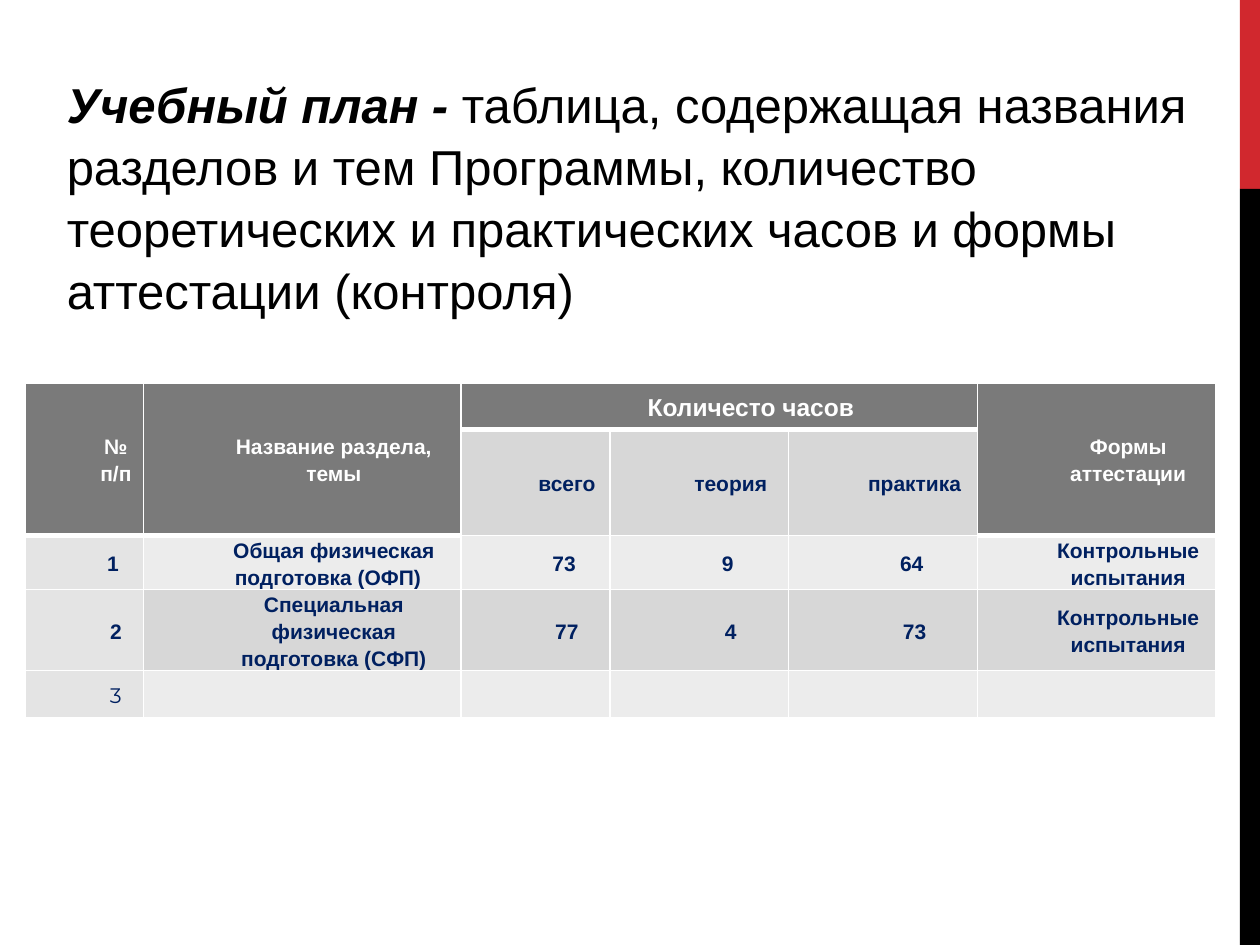
from lxml.etree import SubElement
from pptx import Presentation
from pptx.dml.color import RGBColor
from pptx.enum.shapes import MSO_SHAPE
from pptx.enum.text import MSO_ANCHOR, MSO_AUTO_SIZE, PP_ALIGN
from pptx.oxml import parse_xml
from pptx.oxml.ns import nsdecls, qn
from pptx.util import Inches, Pt

COL_WIDTHS = [0.94, 2.52, 1.18, 1.42, 1.5, 1.89]
ROW_HEIGHTS = [0.37, 0.84, 0.37, 0.37, 0.37]
HOURS_COLS = range(2, 5)
ROWS = [
    ["№ п/п", "Название раздела, темы", "Количесто часов", "", "", "Формы аттестации"],
    ["", "", "всего", "теория", "практика", ""],
    ["1 ", "Общая физическая подготовка (ОФП)  ", "73 ", "9 ", "64 ", "Контрольные испытания"],
    ["2", "Специальная физическая подготовка (СФП)", "77", "4", "73", "Контрольные испытания"],
    ["3", "", "", "", "", ""],
]


def rgb(color):
    return RGBColor.from_string(color)


def add_run(p, text, size, color, bold=False, italic=False, font="Arial"):
    r = p.add_run()
    r.text = text
    r.font.size = Pt(size)
    r.font.name = font
    r.font.bold = bold
    r.font.italic = italic
    r.font.color.rgb = rgb(color)


def add_side_bar(s, left, top, width, height):
    accent = 1.5
    for y, h, color in [(top, accent, "D1282E"), (top + accent, height - accent, "000000")]:
        sp = s.shapes.add_shape(MSO_SHAPE.RECTANGLE, Inches(left), Inches(y), Inches(width), Inches(h))
        sp.shadow.inherit = False
        sp.fill.solid()
        sp.fill.fore_color.rgb = rgb(color)
        sp.line.fill.background()


def fill_definition(body, left, top, width, height):
    body.left, body.top = Inches(left), Inches(top)
    body.width, body.height = Inches(width), Inches(height)
    tf = body.text_frame
    tf.word_wrap = True
    tf.auto_size = MSO_AUTO_SIZE.NONE
    tf.vertical_anchor = MSO_ANCHOR.TOP
    p = tf.paragraphs[0]
    p.line_spacing = 1.05
    p.space_after = Pt(6)
    pPr = p._p.get_or_add_pPr()
    pPr.set("marL", "0")
    pPr.set("indent", "0")
    SubElement(pPr, qn("a:buNone"))
    add_run(p, "Учебный план - ", 28, "000000", bold=True, italic=True)
    add_run(p, "таблица, содержащая названия разделов и тем Программы, количество "
               "теоретических и практических часов и формы аттестации (контроля)", 28, "000000")


def is_header(row, col):
    return row == 0 or (row == 1 and col not in HOURS_COLS)


def cell_fill(row, col):
    if is_header(row, col):
        return "7A7A7A"
    if col == 0:
        return "E4E4E4"
    return "D7D7D7" if row % 2 else "ECECEC"


def set_borders(cell, widths):
    tcPr = cell._tc.get_or_add_tcPr()
    for i, (side, width) in enumerate(widths.items()):
        tcPr.insert(i, parse_xml(
            f'<a:ln{side} {nsdecls("a")} w="{Pt(width)}"><a:solidFill>'
            f'<a:srgbClr val="FFFFFF"/></a:solidFill></a:ln{side}>'))


def format_cell(cell, row, col, text):
    cell.margin_left = cell.margin_right = Inches(0.07)
    cell.margin_top = cell.margin_bottom = 0
    cell.vertical_anchor = MSO_ANCHOR.MIDDLE
    cell.fill.solid()
    cell.fill.fore_color.rgb = rgb(cell_fill(row, col))
    top = 3 if row and is_header(row - 1, col) else 1
    bottom = 3 if is_header(row, col) else 1
    set_borders(cell, {"L": 1, "R": 1, "T": top, "B": bottom})
    if not text:
        return
    p = cell.text_frame.paragraphs[0]
    p.alignment = PP_ALIGN.CENTER
    p.line_spacing = 1.15
    pPr = p._p.get_or_add_pPr()
    pPr.set("marL", str(Inches(0.5)))
    pPr.set("indent", "0")
    last = row == len(ROWS) - 1
    add_run(p, text, 14 if row == 0 and col in HOURS_COLS else 12,
            "FFFFFF" if is_header(row, col) else "002060",
            bold=not last, font="Montserrat" if last else "Arial")


def add_plan_table(s, left, top, width, height):
    table = s.shapes.add_table(len(ROWS), len(COL_WIDTHS), Inches(left), Inches(top),
                               Inches(width), Inches(height)).table
    for column, w in zip(table.columns, COL_WIDTHS):
        column.width = Inches(w)
    for row, h in zip(table.rows, ROW_HEIGHTS):
        row.height = Inches(h)
    for col in (0, 1, 5):
        table.cell(0, col).merge(table.cell(1, col))
    table.cell(0, HOURS_COLS[0]).merge(table.cell(0, HOURS_COLS[-1]))
    for i, texts in enumerate(ROWS):
        for j, text in enumerate(texts):
            format_cell(table.cell(i, j), i, j, text)


def main():
    prs = Presentation()
    prs.slide_width, prs.slide_height = Inches(10), Inches(7.5)
    s = prs.slides.add_slide(prs.slide_layouts[1])
    title = s.shapes.title._element
    title.getparent().remove(title)
    fill_definition(s.placeholders[1], 0.43, 0.52, 9.29, 6.18)
    add_side_bar(s, 9.84, 0, 0.16, 7.5)
    add_plan_table(s, 0.2, 3.04, sum(COL_WIDTHS), sum(ROW_HEIGHTS))
    prs.save("out.pptx")


if __name__ == "__main__":
    main()
